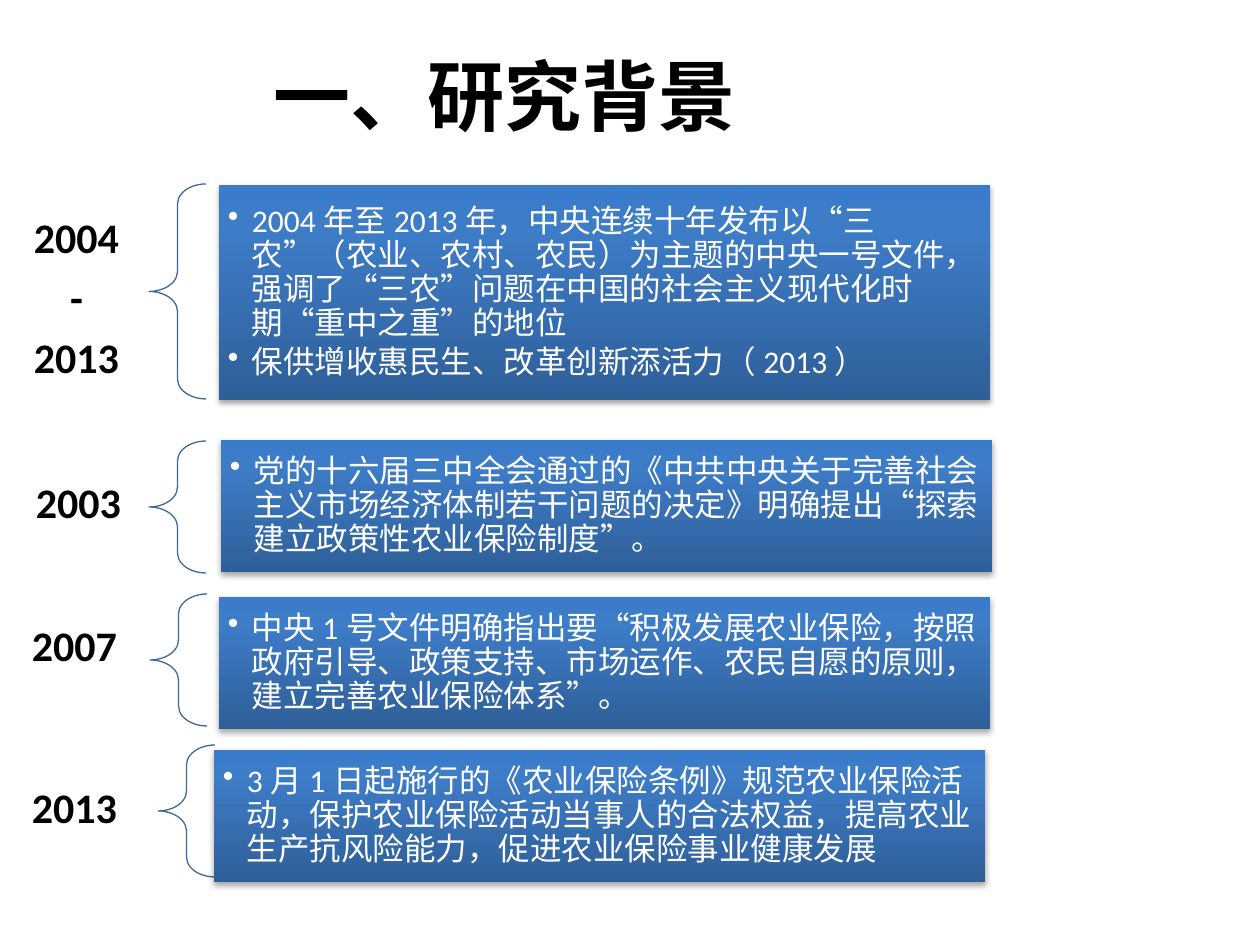
from lxml.etree import SubElement
from pptx import Presentation
from pptx.dml.color import RGBColor
from pptx.enum.lang import MSO_LANGUAGE_ID
from pptx.enum.shapes import MSO_SHAPE
from pptx.enum.text import MSO_ANCHOR, PP_ALIGN
from pptx.oxml.ns import qn
from pptx.util import Pt

PX = 914400 / 126
COLORS = {"ink": "000000", "paper": "FFFFFF", "brace": "3F6797",
          "dark": "2F5F99", "mid": "3D7CC7", "light": "3A7CCB"}
CJK = "Noto Sans CJK SC"

# row box (left, top, height), panel offset, label box within the row, label, bullets
ROWS = [
    ((149, 184, 215), (70, 1), (-155, -11, 165, 253), ["2004", "-", "2013"],
     ["2004年至2013年，中央连续十年发布以“三农”（农业、农村、农民）为主题的中央一号文件，"
      "强调了“三农”问题在中国的社会主义现代化时期“重中之重”的地位",
      "保供增收惠民生、改革创新添活力（2013）"]),
    ((149, 441, 132), (72, -1), (-153, -6, 149, 140), ["2003"],
     ["党的十六届三中全会通过的《中共中央关于完善社会主义市场经济体制若干问题的决定》"
      "明确提出“探索建立政策性农业保险制度”。"]),
    ((150, 594, 132), (69, 3), (-154, 10, 145, 87), ["2007"],
     ["中央1号文件明确指出要“积极发展农业保险，按照政府引导、政策支持、市场运作、"
      "农民自愿的原则，建立完善农业保险体系”。"]),
    ((158, 745, 132), (56, 5), (-174, -3, 157, 136), ["2013"],
     ["3月1日起施行的《农业保险条例》规范农业保险活动，保护农业保险活动当事人的合法权益，"
      "提高农业生产抗风险能力，促进农业保险事业健康发展"]),
]


def px(*sizes):
    return [round(size * PX) for size in sizes]


def rgb(name):
    return RGBColor.from_string(COLORS[name])


def node(parent, tag, **attrs):
    return SubElement(parent, qn(tag), {key: str(val) for key, val in attrs.items()})


def write(shape, lines, size, color="ink", bold=False, font="Calibri",
          align=PP_ALIGN.LEFT, inset=9, spacing=1.0, after=0, bullet=False):
    """Fill a shape with paragraphs; after is a share of the text size."""
    frame = shape.text_frame
    frame.word_wrap = True
    frame.vertical_anchor = MSO_ANCHOR.MIDDLE
    frame.margin_left = frame.margin_right = px(inset)[0]
    frame.margin_top = frame.margin_bottom = px(9)[0]
    for num, line in enumerate(lines):
        para = frame.paragraphs[0] if num == 0 else frame.add_paragraph()
        para.alignment = align
        para.line_spacing = spacing
        para.space_after = Pt(round(size * after, 1))
        if bullet:
            props = para._p.get_or_add_pPr()
            indent = px(24)[0]
            props.set("marL", str(indent))
            props.set("indent", str(-indent))
            node(props, "a:buChar", char="•")
        run = para.add_run()
        run.text = line
        run.font.size = Pt(size)
        run.font.bold = bold
        run.font.name = font
        run.font.color.rgb = rgb(color)
        run.font.language_id = MSO_LANGUAGE_ID.SIMPLIFIED_CHINESE
        latin = run._r.rPr.find(qn("a:latin"))
        east = node(run._r.rPr, "a:ea", typeface=CJK)
        latin.addnext(east)


def shade(shape):
    """Give a shape an upward gradient and a soft shadow below."""
    shape.fill.background()
    shape.line.fill.background()
    shape.shadow.inherit = False
    props = shape._element.spPr
    grad = node(props, "a:gradFill", rotWithShape=1)
    stops = node(grad, "a:gsLst")
    for place, name in ((0, "dark"), (80, "mid"), (100, "light")):
        stop = node(stops, "a:gs", pos=place * 1000)
        node(stop, "a:srgbClr", val=COLORS[name])
    node(grad, "a:lin", ang=270 * 60000, scaled=0)
    props.replace(props.find(qn("a:noFill")), grad)
    glow = node(props.find(qn("a:effectLst")), "a:outerShdw", blurRad=Pt(3.1),
                dist=Pt(1.8), dir=90 * 60000, rotWithShape=0)
    node(node(glow, "a:srgbClr", val=COLORS["ink"]), "a:alpha", val=35000)


def add_title(shapes, box):
    title = shapes.add_textbox(*px(*box))
    write(title, ["一、研究背景"], 44, bold=True, font=CJK, align=PP_ALIGN.CENTER)


def add_row(shapes, box, shift, label, years, points):
    left, top, height = box
    dx, dy, wide, high = label
    text = shapes.add_textbox(*px(left + dx, top + dy, wide, high))
    align = PP_ALIGN.CENTER if len(years) > 1 else PP_ALIGN.RIGHT
    write(text, years, 24, bold=True, align=align, inset=24, spacing=0.9, after=0.35)

    brace = shapes.add_shape(MSO_SHAPE.LEFT_BRACE, *px(left, top, 57, height))
    brace.adjustments[0] = 0.35
    brace.adjustments[1] = 0.5
    brace.fill.background()
    brace.line.color.rgb = rgb("brace")
    brace.line.width = Pt(0.75)
    brace.shadow.inherit = False

    panel = shapes.add_shape(MSO_SHAPE.RECTANGLE,
                             *px(left + shift[0], top + shift[1], 771, height))
    shade(panel)
    write(panel, points, 18, color="paper", spacing=0.9, after=0.15, bullet=True)


def main():
    deck = Presentation()
    deck.slide_width, deck.slide_height = px(1260, 945)
    slide = deck.slides.add_slide(deck.slide_layouts[6])
    add_title(slide.shapes, (74, 30, 861, 130))
    for row in ROWS:
        add_row(slide.shapes, *row)
    deck.save("out.pptx")


if __name__ == "__main__":
    main()
